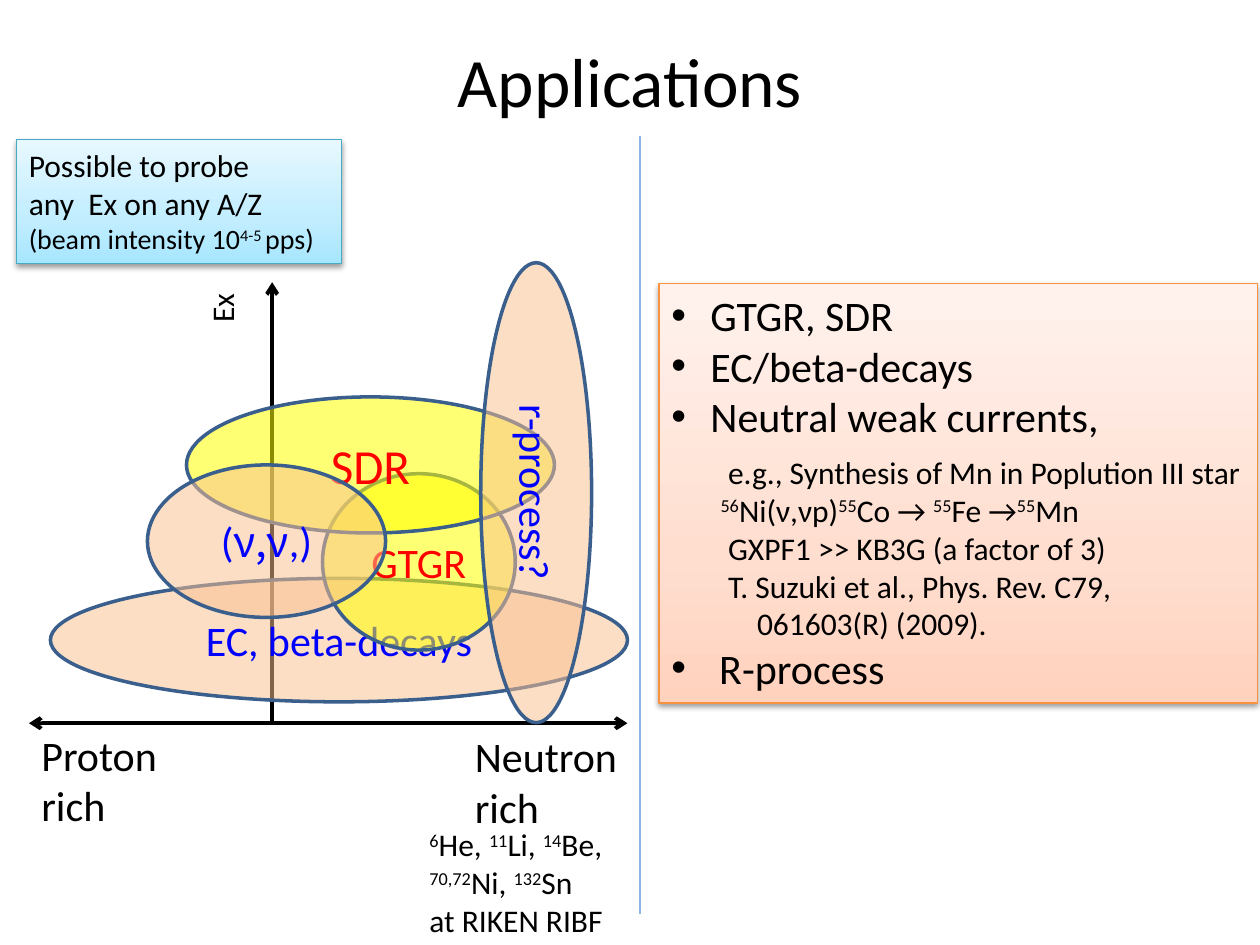
from copy import deepcopy

from lxml.etree import SubElement as Sub
from pptx import Presentation
from pptx.dml.color import RGBColor as RGB
from pptx.enum.shapes import MSO_CONNECTOR as LINE, MSO_SHAPE as SHAPE
from pptx.enum.text import MSO_ANCHOR as ANCHOR, PP_ALIGN as ALIGN
from pptx.oxml.ns import qn
from pptx.util import Inches, Pt

BLACK = RGB(0, 0, 0)
BLUE = RGB(0, 0, 255)
RED = RGB(255, 0, 0)
YELLOW = RGB(255, 255, 0)
PEACH = RGB(0xFA, 0xC0, 0x90)
NAVY = RGB(0x3A, 0x5F, 0x8C)
PALE = RGB(0x8E, 0xB4, 0xE3)
TEAL = RGB(0x46, 0xAA, 0xC5)
ORANGE = RGB(0xF6, 0x92, 0x40)
SKY = [RGB(0xA7, 0xE6, 0xFF), RGB(0xC1, 0xED, 0xFF), RGB(0xE7, 0xF8, 0xFF)]
ROSE = [RGB(0xFF, 0xD2, 0xBD), RGB(0xFF, 0xDE, 0xD0), RGB(0xFF, 0xF2, 0xED)]
FONT, GREEK = "Calibri", "Noto Sans CJK KR"
WIDE, HIGH = 10, 7.5


def lift(run):
    """Superscript."""
    run._r.get_or_add_rPr().set("baseline", "30000")


def greek(run):
    run.font.name = GREEK


def write(para, text, size, color=BLACK, mark=lift):
    """Fill a paragraph; pieces between carets are styled by mark."""
    for i, piece in enumerate(text.split("^")):
        if piece:
            run = para.add_run()
            run.text = piece
            run.font.name, run.font.size = FONT, Pt(size)
            run.font.color.rgb = color
            if i % 2:
                mark(run)


def fill_text(shape, lines):
    """Write (text, size) lines and return the paragraphs."""
    frame = shape.text_frame
    frame.word_wrap = True
    frame.vertical_anchor = ANCHOR.TOP
    for i, (text, size) in enumerate(lines):
        para = frame.add_paragraph() if i else frame.paragraphs[0]
        para.alignment = ALIGN.LEFT
        write(para, text, size)
    return frame.paragraphs


def add_text(slide, box, lines):
    shape = slide.shapes.add_textbox(*map(Inches, box))
    fill_text(shape, lines)
    return shape


def add_line(slide, start, end, color, width, heads=()):
    line = slide.shapes.add_connector(LINE.STRAIGHT, *map(Inches, start + end))
    line.line.color.rgb = color
    line.line.width = Pt(width)
    for head in heads:
        Sub(line.line._get_or_add_ln(), qn("a:" + head), type="arrow")
    Sub(line._element.spPr, qn("a:effectLst"))


def add_panel(slide, box, shades, edge):
    """Rectangle with a three-stop gradient and a soft shadow."""
    panel = slide.shapes.add_shape(SHAPE.RECTANGLE, *map(Inches, box))
    panel.fill.gradient()
    panel.fill.gradient_angle = 90
    stops = panel._element.spPr.find(".//" + qn("a:gsLst"))
    stops.append(deepcopy(stops[-1]))
    for stop, shade, pos in zip(panel.fill.gradient_stops, shades, (0, 0.35, 1)):
        stop.color.rgb, stop.position = shade, pos
    panel.line.color.rgb, panel.line.width = edge, Pt(0.75)
    panel.shadow.inherit = False
    cast = Sub(panel._element.spPr.find(qn("a:effectLst")), qn("a:outerShdw"),
               blurRad="40000", dist="20000", dir="5400000", rotWithShape="0")
    tint = Sub(cast, qn("a:srgbClr"), val="000000")
    Sub(tint, qn("a:alpha"), val="38000")
    return panel


def add_oval(slide, box, text, size, color, fill, alpha, turn=0):
    oval = slide.shapes.add_shape(SHAPE.OVAL, *map(Inches, box))
    oval.rotation = turn
    oval.fill.solid()
    oval.fill.fore_color.rgb = fill
    tint = oval._element.spPr.find(qn("a:solidFill"))[0]
    Sub(tint, qn("a:alpha"), val=str(alpha * 1000))
    oval.line.color.rgb, oval.line.width = NAVY, Pt(2)
    oval.shadow.inherit = False
    frame = oval.text_frame
    frame.word_wrap = True
    frame.vertical_anchor = ANCHOR.MIDDLE
    frame.paragraphs[0].alignment = ALIGN.CENTER
    write(frame.paragraphs[0], text, size, color, greek)


def add_title(slide, box):
    title = add_text(slide, box, [("Applications", 39.6)])
    title.text_frame.margin_top = 0
    title.text_frame.paragraphs[0].alignment = ALIGN.CENTER


def add_note(slide, box):
    panel = add_panel(slide, box, SKY, TEAL)
    fill_text(panel, [("Possible to probe", 18), ("any  Ex on any A/Z", 18),
                      ("(beam intensity 10^4-5 ^pps)", 16)])


def add_map(slide, box):
    """Excitation energy against proton/neutron richness, on a 50 x 55 grid."""
    left, top, width, height = box
    col, row = width / 50, height / 55

    def at(x, y):
        return left + x * col, top + y * row

    def cell(x, y, w, h):
        return at(x, y) + (w * col, h * row)

    # Axes
    base, stem = 37.4, 21.6
    add_line(slide, at(2.3, base), at(49.8, base), BLACK, 2.25,
             ("headEnd", "tailEnd"))
    add_line(slide, at(stem, base), at(stem, 2.4), BLACK, 2.25, ("tailEnd",))
    add_text(slide, cell(14.2, 1.2, 6.8, 4), [("Ex", 18)]).rotation = 270
    add_text(slide, cell(36.7, 37.5, 16, 9.1), [("Neutron rich", 24)])
    add_text(slide, cell(2.3, base, 16, 9.1), [("Proton rich", 24)])

    # Regions, back to front
    for spot, *look in (
        ((4, 25.9, 45.8, 9.8), "EC, beta-decays", 24, BLUE, PEACH, 52),
        ((25.6, 17.6, 15.3, 14), "GTGR", 24, RED, YELLOW, 55),
        ((14.8, 11.5, 29.2, 10.8), "SDR", 28, RED, YELLOW, 55),
        ((11.7, 16.9, 18.9, 12.1), "(^ν,ν^,)", 24, BLUE, PEACH, 52),
        ((24.3, 14.7, 36.5, 8.8), "r-process?", 24, BLUE, PEACH, 52, 90),
    ):
        add_oval(slide, cell(*spot), *look)

    # Nuclei
    add_text(slide, cell(33.1, 45, 16.9, 10.1), [
        ("^6^He, ^11^Li, ^14^Be,", 18), ("^70,72^Ni, ^132^Sn", 18),
        ("at RIKEN RIBF", 18)])


def add_topics(slide, box):
    """Bulleted list with indented details: text, size, indent in inches."""
    items = [
        ("GTGR, SDR", 24, 0.31),
        ("EC/beta-decays", 24, 0.31),
        ("Neutral weak currents,", 24, 0.31),
        ("e.g., Synthesis of Mn in Poplution III star", 18, 0.45),
        ("^56^Ni(ν,νp)^55^Co → ^55^Fe →^55^Mn", 18, 0.39),
        ("GXPF1 >> KB3G (a factor of 3)", 18, 0.45),
        ("T. Suzuki et al., Phys. Rev. C79,", 18, 0.45),
        ("061603(R) (2009).", 18, 0.68),
        ("R-process", 24, 0.38),
    ]
    panel = add_panel(slide, box, ROSE, ORANGE)
    paras = fill_text(panel, [item[:2] for item in items])
    paras[3].space_before = Pt(7)
    for para, (_, size, indent) in zip(paras, items):
        props = para._p.get_or_add_pPr()
        props.set("marL", str(Inches(indent)))
        if size == 24:
            props.set("indent", str(-Inches(indent)))
            Sub(props, qn("a:buFont"), typeface="Arial")
            Sub(props, qn("a:buChar"), char="•")


def main():
    deck = Presentation()
    deck.slide_width, deck.slide_height = Inches(WIDE), Inches(HIGH)
    slide = deck.slides.add_slide(deck.slide_layouts[6])
    add_title(slide, (0.5, 0.3, 9, 1.25))
    add_map(slide, (0, 2, 5, 5.5))
    add_topics(slide, (5.23, 2.25, 4.75, 3.33))
    add_note(slide, (0.13, 1.11, 2.58, 0.98))
    add_line(slide, (5.08, 1.08), (5.08, 7.25), PALE, 0.75)
    deck.save("out.pptx")


if __name__ == "__main__":
    main()
